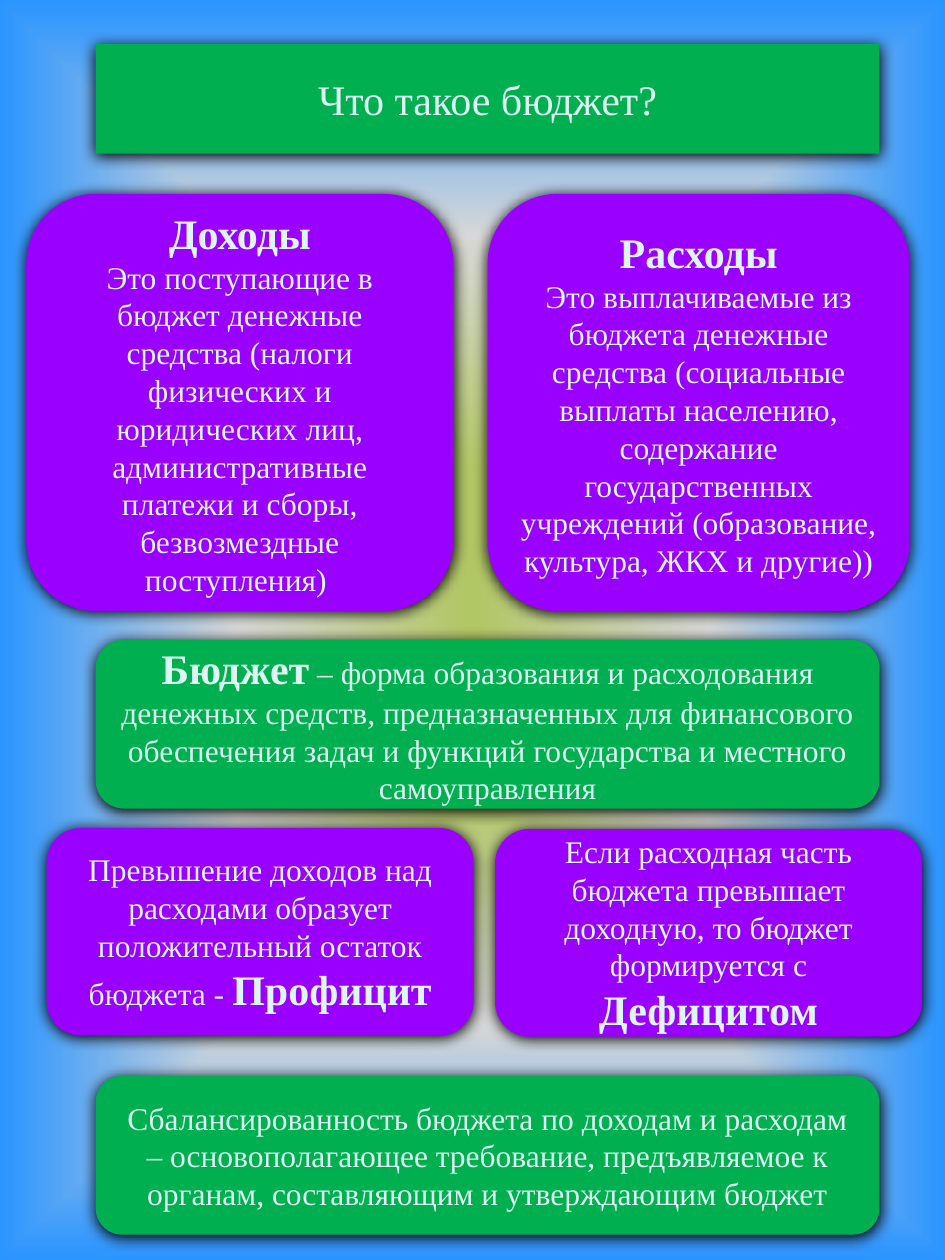
from dataclasses import dataclass

from lxml import etree
from pptx import Presentation
from pptx import util as u
from pptx.dml import color
from pptx.enum import shapes, text
from pptx.oxml import ns
from pptx.shapes.autoshape import Shape
from pptx.slide import Slide


@dataclass(frozen=True)
class Theme:
    font: str = "Times New Roman"
    ink: str = "DEF6F1"
    green: str = "00B050"
    violet: str = "9900FF"
    shadow: str = "000000"
    backdrop: tuple[tuple[int, str], ...] = ((0, "B1C664"), (50, "D7D7D7"), (100, "2A94FF"))
    heading_size: int = 24
    body_size: int = 18


@dataclass(frozen=True)
class Span:
    words: str
    heading: bool = False
    bold: bool = False


@dataclass(frozen=True)
class Card:
    left: float
    top: float
    width: float
    height: float
    fill: str
    paragraphs: list[list[Span]]


THEME = Theme()
BAND_LEFT, BAND_WIDTH = 1.93, 15.8
CARD_WIDTH = 8.61
TERMS_TOP, TERMS_HEIGHT = 3.91, 8.41
OUTCOME_HEIGHT = 4.19


def term(words: str) -> Span:
    return Span(words, heading=True, bold=True)


def band(top: float, height: float, spans: list[Span]) -> Card:
    return Card(BAND_LEFT, top, BAND_WIDTH, height, THEME.green, [spans])


TITLE = band(0.89, 2.21, [Span("Что такое бюджет?", heading=True)])
CARDS = [
    Card(0.53, TERMS_TOP, CARD_WIDTH, TERMS_HEIGHT, THEME.violet, [
        [term("Доходы")],
        [Span("Это поступающие в бюджет денежные средства (налоги физических и "
              "юридических лиц, административные платежи и сборы, "
              "безвозмездные поступления) ")],
    ]),
    Card(9.83, TERMS_TOP, 8.51, TERMS_HEIGHT, THEME.violet, [
        [term("Расходы")],
        [Span("Это выплачиваемые из бюджета денежные средства (социальные выплаты "
              "населению, содержание государственных учреждений (образование, "
              "культура, ЖКХ и другие))")],
    ]),
    band(12.9, 3.4, [
        term("Бюджет"),
        Span(" – форма образования и расходования денежных средств, предназначенных "
             "для финансового обеспечения задач и функций государства и местного "
             "самоуправления"),
    ]),
    Card(0.94, 16.69, CARD_WIDTH, OUTCOME_HEIGHT, THEME.violet, [[
        Span("Превышение доходов над расходами образует положительный остаток бюджета - "),
        term("Профицит"),
    ]]),
    Card(9.98, 16.71, CARD_WIDTH, OUTCOME_HEIGHT, THEME.violet, [[
        Span("Если расходная часть бюджета превышает доходную, то бюджет формируется с "),
        term("Дефицитом"),
    ]]),
    band(21.69, 3.2, [
        Span("Сбалансированность бюджета по доходам и расходам – основополагающее "
             "требование, предъявляемое к органам, составляющим и утверждающим бюджет"),
    ]),
]


def add_xml(parent: etree._Element, tag: str, **attributes: object) -> etree._Element:
    values = {name: str(value) for name, value in attributes.items()}
    return etree.SubElement(parent, ns.qn(tag), values)


def paint_backdrop(page: Slide) -> None:
    """Fill the page with a gradient that spreads from its centre."""
    page.background.fill.gradient()
    gradient = page.element.xpath(".//p:bgPr/a:gradFill")[0]
    for child in list(gradient):
        gradient.remove(child)
    stops = add_xml(gradient, "a:gsLst")
    for percent, value in THEME.backdrop:
        add_xml(add_xml(stops, "a:gs", pos=percent * 1000), "a:srgbClr", val=value)
    focus = add_xml(gradient, "a:path", path="shape")
    add_xml(focus, "a:fillToRect", l=50000, t=50000, r=50000, b=50000)


def round_placeholder(box: Shape) -> None:
    """Give a placed placeholder the rounded outline of the cards."""
    outline = etree.Element(ns.qn("a:prstGeom"), {"prst": "roundRect"})
    add_xml(outline, "a:avLst")
    box.element.spPr.insert(1, outline)


def add_shadow(box: Shape) -> None:
    box.shadow.inherit = False
    effects = box.element.spPr.find(ns.qn("a:effectLst"))
    shadow = add_xml(effects, "a:outerShdw", blurRad=u.Pt(8.5), dist=u.Pt(1),
                     dir=90 * 60000, algn="ctr", rotWithShape=0)
    add_xml(shadow, "a:srgbClr", val=THEME.shadow)


def write_text(box: Shape, paragraphs: list[list[Span]]) -> None:
    frame = box.text_frame
    frame.word_wrap = True
    frame.auto_size = text.MSO_AUTO_SIZE.NONE
    frame.vertical_anchor = text.MSO_ANCHOR.MIDDLE
    for index, spans in enumerate(paragraphs):
        para = frame.add_paragraph() if index else frame.paragraphs[0]
        para.alignment = text.PP_ALIGN.CENTER
        for span in spans:
            run = para.add_run()
            run.text = span.words
            run.font.name = THEME.font
            run.font.size = u.Pt(THEME.heading_size if span.heading else THEME.body_size)
            run.font.bold = span.bold
            run.font.color.rgb = color.RGBColor.from_string(THEME.ink)


def bounds(card: Card) -> list[u.Cm]:
    return [u.Cm(side) for side in (card.left, card.top, card.width, card.height)]


def format_card(box: Shape, card: Card) -> None:
    box.fill.solid()
    box.fill.fore_color.rgb = color.RGBColor.from_string(card.fill)
    box.line.fill.background()
    add_shadow(box)
    write_text(box, card.paragraphs)


def place_title(page: Slide, card: Card) -> None:
    box = page.shapes.title
    box.left, box.top, box.width, box.height = bounds(card)
    round_placeholder(box)
    format_card(box, card)


def add_card(page: Slide, card: Card) -> None:
    box = page.shapes.add_shape(shapes.MSO_SHAPE.ROUNDED_RECTANGLE, *bounds(card))
    format_card(box, card)


def main() -> None:
    deck = Presentation()
    deck.slide_width, deck.slide_height = u.Cm(19.05), u.Cm(25.4)
    page = deck.slides.add_slide(deck.slide_layouts.get_by_name("Title Only"))
    paint_backdrop(page)
    place_title(page, TITLE)
    for card in CARDS:
        add_card(page, card)
    deck.save("out.pptx")


if __name__ == "__main__":
    main()
